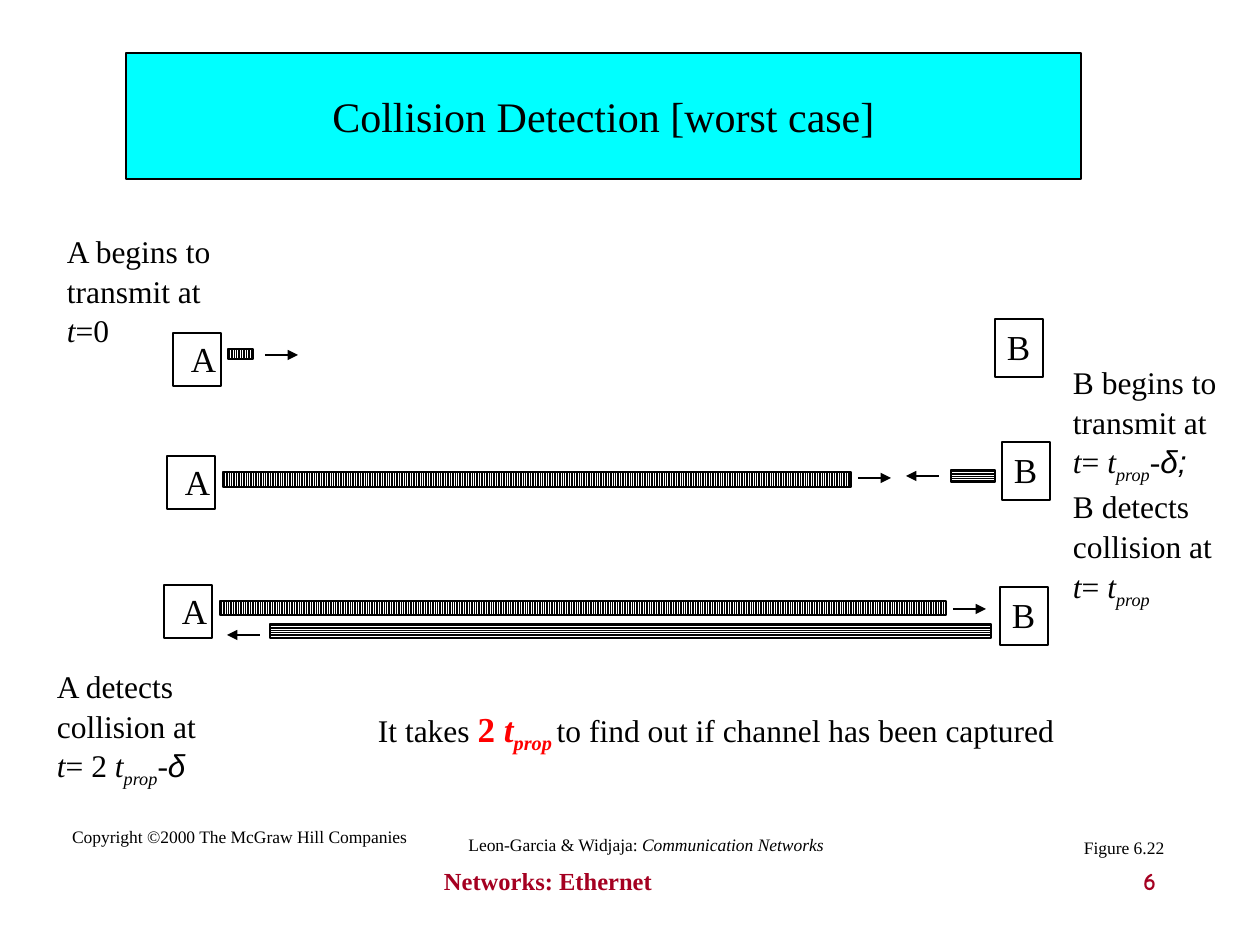
from lxml import etree
from pptx import Presentation
from pptx.dml.color import RGBColor
from pptx.enum.dml import MSO_PATTERN
from pptx.enum.shapes import MSO_CONNECTOR, MSO_SHAPE
from pptx.enum.text import MSO_ANCHOR, MSO_AUTO_SIZE, PP_ALIGN
from pptx.oxml.ns import qn
from pptx.util import Emu, Inches, Pt

PX_PER_INCH = 126
LEFT, CENTER, RIGHT = PP_ALIGN.LEFT, PP_ALIGN.CENTER, PP_ALIGN.RIGHT
TOP, MIDDLE = MSO_ANCHOR.TOP, MSO_ANCHOR.MIDDLE
VERTICAL, HORIZONTAL = MSO_PATTERN.LIGHT_VERTICAL, MSO_PATTERN.LIGHT_HORIZONTAL
RECTANGLE, STRAIGHT = MSO_SHAPE.RECTANGLE, MSO_CONNECTOR.STRAIGHT
TITLE_ONLY = 5

COLORS = {"ink": "000000", "paper": "FFFFFF", "title": "00FFFF",
          "accent": "FF0000", "footer": "A50021"}
SERIF, SANS, NUMBER_FONT = "Times New Roman", "Arial", "Comic Neue"

ITALIC = {"italic": True}
SUBSCRIPT = {"italic": True, "baseline": -25}
GREEK = {"italic": True, "font": SANS}
STRONG = {"size": 20, "bold": True, "color": "accent"}
T_PROP = [("t", ITALIC), ("prop", SUBSCRIPT)]


def color(name):
    return RGBColor.from_string(COLORS[name])


def px(length):
    return Emu(round(length * Inches(1) / PX_PER_INCH))


def write(frame, paragraphs, align=LEFT, anchor=TOP, spacing=1.0, side=13, **base):
    """Fill a frame; a paragraph is a string or a list of (text, format) spans."""
    frame.word_wrap = True
    frame.auto_size = MSO_AUTO_SIZE.NONE
    frame.vertical_anchor = anchor
    frame.margin_left = frame.margin_right = px(side)
    frame.margin_top = frame.margin_bottom = px(6)
    for index, spans in enumerate(paragraphs):
        para = frame.paragraphs[0] if index == 0 else frame.add_paragraph()
        para.alignment = align
        para.line_spacing = spacing
        para.space_before = Pt(0)
        for text, changes in [(spans, {})] if isinstance(spans, str) else spans:
            style = {"size": 18, "font": SERIF, "color": "ink", **base, **changes}
            span = para.add_run()
            span.text = text
            span.font.name = style["font"]
            span.font.size = Pt(style["size"])
            span.font.bold = style.get("bold", False)
            span.font.italic = style.get("italic", False)
            span.font.color.rgb = color(style["color"])
            if "baseline" in style:
                span.font._element.set("baseline", str(style["baseline"] * 1000))


class Diagram:
    def __init__(self, deck):
        self.page = deck.slides.add_slide(deck.slide_layouts[TITLE_ONLY])

    def title(self, text, left, top, width, height):
        box = self.page.shapes.title
        box.left, box.top, box.width, box.height = map(px, (left, top, width, height))
        box.fill.solid()
        box.fill.fore_color.rgb = color("title")
        self.outline(box, 0.75)
        write(box.text_frame, [text], align=CENTER, anchor=MIDDLE, size=24)

    def outline(self, shape, width=1):
        shape.line.color.rgb = color("ink")
        shape.line.width = Pt(width)

    def text(self, paragraphs, left, top, width, height, **style):
        box = self.page.shapes.add_textbox(*map(px, (left, top, width, height)))
        write(box.text_frame, paragraphs, **style)

    def rectangle(self, left, top, width, height):
        box = self.page.shapes.add_shape(RECTANGLE, *map(px, (left, top, width, height)))
        box.shadow.inherit = False
        self.outline(box)
        return box

    def station(self, name, left, top, height, label_shift):
        self.rectangle(left, top, 48, height).fill.background()
        across, down = label_shift
        self.text([name], left + across, top + down, 50, 54, size=20)

    def signal(self, pattern, left, top, width, height):
        fill = self.rectangle(left, top, width, height).fill
        fill.patterned()
        fill.pattern = pattern
        fill.fore_color.rgb = color("paper")
        fill.back_color.rgb = color("ink")

    def arrow(self, start, end, y):
        line = self.page.shapes.add_connector(STRAIGHT, px(start), px(y), px(end), px(y))
        self.outline(line)
        etree.SubElement(line.line._get_or_add_ln(), qn("a:tailEnd"), type="triangle")
        etree.SubElement(line._element.spPr, qn("a:effectLst"))


def main():
    deck = Presentation()
    deck.slide_width, deck.slide_height = Inches(10), Inches(7.5)
    diagram = Diagram(deck)
    diagram.title("Collision Detection [worst case]", 126, 53, 955, 126)

    for left, top in [(173, 333), (167, 456), (164, 585)]:
        diagram.station("A", left, top, 53, label_shift=(5, -2))
    for left, top in [(995, 319), (1002, 442), (1000, 587)]:
        diagram.station("B", left, top, 58, label_shift=(-1, 0))

    for pattern, left, top, width, height in [
        (VERTICAL, 228, 349, 25, 10),
        (VERTICAL, 223, 472, 628, 15),
        (HORIZONTAL, 951, 470, 44, 12),
        (VERTICAL, 220, 601, 726, 14),
        (HORIZONTAL, 270, 624, 721, 14),
    ]:
        diagram.signal(pattern, left, top, width, height)

    for start, end, y in [(265, 298, 355), (858, 891, 478), (939, 906, 476),
                          (953, 986, 609), (260, 227, 635)]:
        diagram.arrow(start, end, y)

    diagram.text(["A begins to", "transmit at", [("t", ITALIC), ("=0", {})]],
                 54, 224, 178, 126, spacing=1.05)
    arrival = [("t", ITALIC), ("= ", {}), *T_PROP]
    diagram.text(["B begins to", "transmit at",
                  [*arrival, ("-", ITALIC), ("δ;", GREEK)],
                  "B detects", "collision at", arrival],
                 1060, 355, 176, 239, spacing=1.05)
    diagram.text(["A detects", "collision at",
                  [("t", ITALIC), ("= 2 ", {}), *T_PROP, ("-", ITALIC), ("δ", GREEK)]],
                 44, 659, 217, 126, spacing=1.05)

    strong_t_prop = [(text, {**STRONG, **style}) for text, style in T_PROP]
    diagram.text([[("It takes ", {}), ("2 ", STRONG), *strong_t_prop,
                   (" ", SUBSCRIPT),
                   ("to find out if channel has been captured", {})]],
                 365, 701, 707, 54)

    for spans, left, top, width in [
        ("Copyright ©2000 The McGraw Hill Companies", 58, 819, 363),
        ([("Leon-Garcia & Widjaja: ", {}), ("Communication Networks", ITALIC)],
         452, 828, 388),
        ("Figure 6.22", 1071, 830, 106),
    ]:
        diagram.text([spans], left, top, width, 34, align=CENTER, anchor=MIDDLE,
                     size=10, side=0)

    footer = {"size": 14, "bold": True, "color": "footer"}
    diagram.text(["Networks: Ethernet"], 431, 860, 399, 63, **footer)
    diagram.text(["6"], 907, 860, 262, 63, align=RIGHT, font=NUMBER_FONT, **footer)

    deck.save("out.pptx")


if __name__ == "__main__":
    main()
